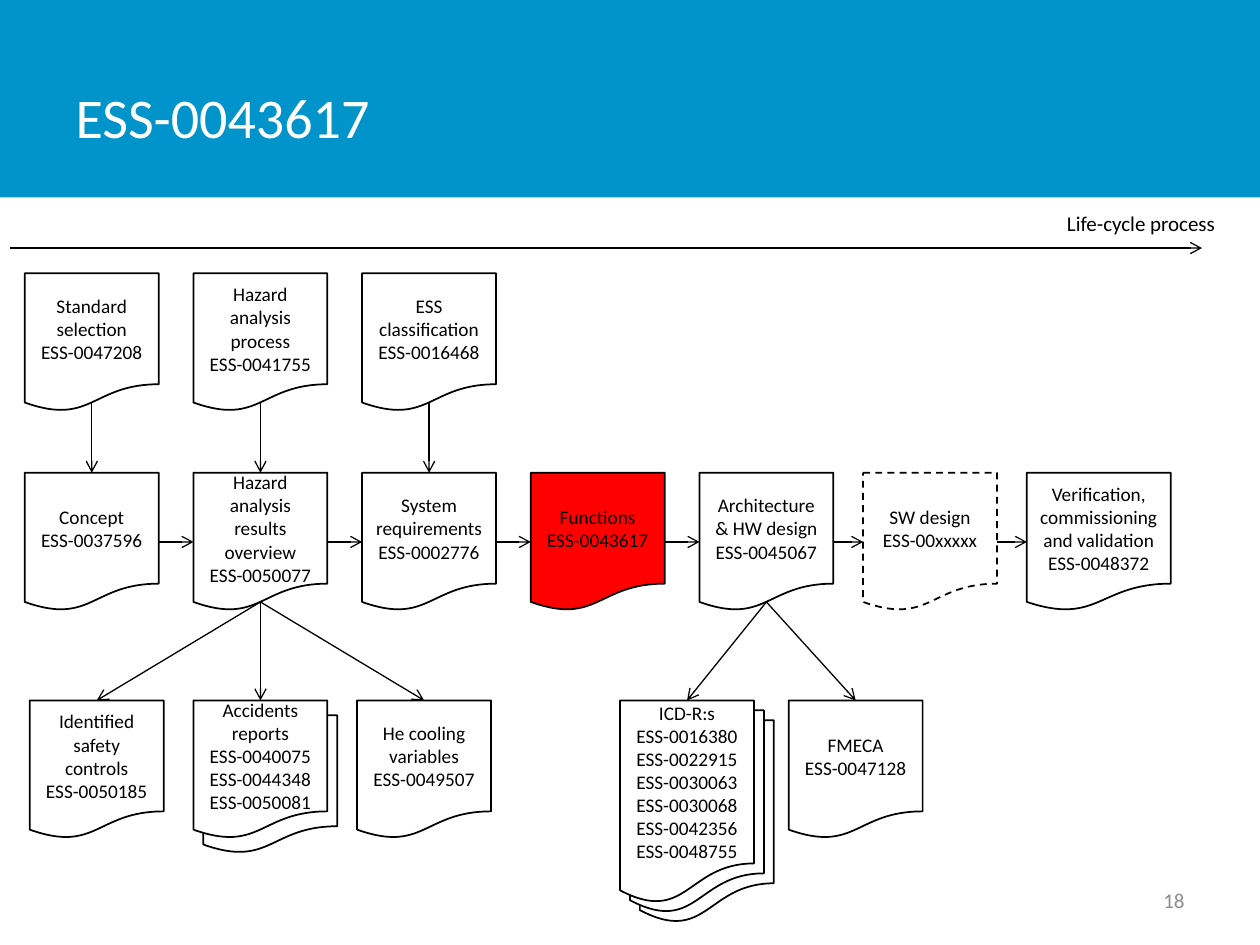
from dataclasses import dataclass

import pptx
import pptx.dml.color
import pptx.enum.dml
import pptx.enum.shapes
import pptx.enum.text
import pptx.oxml
import pptx.oxml.ns
import pptx.util
from pptx.util import Cm

COLORS = {"band": "0094CA", "paper": "FFFFFF", "ink": "000000",
          "current": "FF0000", "number": "8C8C8C"}
FONT = "Calibri"
ALIGN = pptx.enum.text.PP_ALIGN
MIDDLE = pptx.enum.text.MSO_ANCHOR.MIDDLE
SHAPE = pptx.enum.shapes.MSO_SHAPE
TOP, LEFT, BOTTOM, RIGHT = range(4)
CURVE = 20172 / 21600  # height share where the wavy edge crosses the centre

# Rows and columns, in cm
DOC_W, DOC_H = 2.7, 2.79
INPUT_Y, MAIN_Y, DETAIL_Y = 5.51, 9.53, 14.12
COLS = [0.5 + 3.4 * i for i in range(5)]


@dataclass
class Document:
    key: str
    x: float
    y: float
    text: str
    w: float = DOC_W
    h: float = DOC_H
    fill: str = "paper"
    dashed: bool = False
    copies: int = 0  # sheets stacked behind
    copy_dy: float = 0.2


DOCUMENTS = [
    # Inputs
    Document("standard", COLS[0], INPUT_Y, "Standard selection\nESS-0047208"),
    Document("process", COLS[1], INPUT_Y, "Hazard analysis process\nESS-0041755"),
    Document("classes", COLS[2], INPUT_Y, "ESS classification\nESS-0016468"),
    # Main chain
    Document("concept", COLS[0], MAIN_Y, "Concept\nESS-0037596"),
    Document("hazards", COLS[1], MAIN_Y,
             "Hazard analysis results overview\nESS-0050077"),
    Document("system", COLS[2], MAIN_Y, "System requirements\nESS-0002776"),
    Document("functions", COLS[3], MAIN_Y, "Functions\nESS-0043617", fill="current"),
    Document("hardware", COLS[4], MAIN_Y, "Architecture & HW design\nESS-0045067"),
    Document("software", 17.4, MAIN_Y, "SW design\nESS-00xxxxx", dashed=True),
    Document("validation", 20.7, MAIN_Y,
             "Verification, commissioning and validation\nESS-0048372", w=2.9),
    # Details
    Document("controls", 0.6, DETAIL_Y, "Identified safety controls\nESS-0050185"),
    Document("accidents", COLS[1], DETAIL_Y,
             "Accidents reports\nESS-0040075\nESS-0044348\nESS-0050081",
             copies=1, copy_dy=0.3),
    Document("cooling", 7.2, DETAIL_Y, "He cooling variables\nESS-0049507"),
    Document("icd", 12.5, DETAIL_Y,
             "ICD-R:s\nESS-0016380\nESS-0022915\nESS-0030063\n"
             "ESS-0030068\nESS-0042356\nESS-0048755", h=4.1, copies=2),
    Document("fmeca", 15.9, DETAIL_Y, "FMECA\nESS-0047128"),
]
CHAIN = ["concept", "hazards", "system", "functions", "hardware", "software",
         "validation"]
DOWNWARD = [("standard", "concept"), ("process", "hazards"), ("classes", "system"),
            ("hazards", "controls"), ("hazards", "accidents"),
            ("hazards", "cooling"), ("hardware", "icd"), ("hardware", "fmeca")]


def rgb(name: str) -> pptx.dml.color.RGBColor:
    return pptx.dml.color.RGBColor.from_string(COLORS[name])


def write(tf, text: str, size: int, color: str, align) -> None:
    for i, line in enumerate(text.split("\n")):
        p = tf.add_paragraph() if i else tf.paragraphs[0]
        p.alignment = align
        r = p.add_run()
        r.text = line
        r.font.name, r.font.size = FONT, pptx.util.Pt(size)
        r.font.color.rgb = rgb(color)


def add_sheet(s, doc: Document, offset: int):
    """Draw one sheet, moved right and down by its place in the stack."""
    sp = s.shapes.add_shape(SHAPE.FLOWCHART_DOCUMENT, Cm(doc.x + 0.2 * offset),
                            Cm(doc.y + doc.copy_dy * offset), Cm(doc.w), Cm(doc.h))
    sp.shadow.inherit = False
    sp.fill.solid()
    sp.fill.fore_color.rgb = rgb(doc.fill)
    sp.line.color.rgb = rgb("ink")
    sp.line.width = pptx.util.Pt(1)
    if doc.dashed:
        sp.line.dash_style = pptx.enum.dml.MSO_LINE.DASH
    return sp


def add_document(s, doc: Document):
    for offset in range(doc.copies, 0, -1):
        add_sheet(s, doc, offset)
    sp = add_sheet(s, doc, 0)
    tf = sp.text_frame
    tf.word_wrap = True
    tf.vertical_anchor = MIDDLE
    write(tf, doc.text, 11, "ink", ALIGN.CENTER)
    return sp


def add_arrow(s, x1: float = 0, y1: float = 0, x2: float = 0, y2: float = 0):
    c = s.shapes.add_connector(pptx.enum.shapes.MSO_CONNECTOR.STRAIGHT,
                               Cm(x1), Cm(y1), Cm(x2), Cm(y2))
    c.line.color.rgb = rgb("ink")
    c.line.width = pptx.util.Pt(0.75)
    ln = c.line._get_or_add_ln()
    ln.append(pptx.oxml.parse_xml(
        f'<a:tailEnd {pptx.oxml.ns.nsdecls("a")} type="arrow"/>'))
    ln.addnext(pptx.oxml.parse_xml(
        f'<a:effectLst {pptx.oxml.ns.nsdecls("a")}/>'))
    return c


def join(s, start, start_side: int, end, end_side: int) -> None:
    c = add_arrow(s)
    c.begin_connect(start, start_side)
    c.end_connect(end, end_side)
    if start_side == BOTTOM:
        c.begin_y = start.top + round(start.height * CURVE)


def add_label(s, x: float, y: float, w: float, h: float, text: str,
              color: str, align, wrap: bool):
    tf = s.shapes.add_textbox(Cm(x), Cm(y), Cm(w), Cm(h)).text_frame
    tf.word_wrap = wrap
    write(tf, text, 12, color, align)
    return tf


def main() -> None:
    prs = pptx.Presentation()
    prs.slide_width, prs.slide_height = Cm(25.4), Cm(19.05)
    s = prs.slides.add_slide(prs.slide_layouts[5])

    # Title on its band
    title = s.shapes.title
    title.left, title.top, title.width, title.height = (
        Cm(1.27), Cm(0.76), Cm(19.84), Cm(3.18))
    title.text_frame.vertical_anchor = MIDDLE
    write(title.text_frame, "ESS-0043617", 32, "paper", ALIGN.LEFT)
    band = s.shapes.add_shape(SHAPE.RECTANGLE, 0, 0, prs.slide_width, Cm(3.98))
    band.shadow.inherit = False
    band.fill.solid()
    band.fill.fore_color.rgb = rgb("band")
    band.line.fill.background()
    title.element.addprevious(band.element)

    # Time line
    add_arrow(s, 0.2, 5, 24.23, 5)
    add_label(s, 21.26, 4.12, 3.52, 0.77, "Life-cycle process", "ink",
              ALIGN.LEFT, wrap=False)

    # Documents and their links
    sheets = {doc.key: add_document(s, doc) for doc in DOCUMENTS}
    for a, b in zip(CHAIN, CHAIN[1:]):
        join(s, sheets[a], RIGHT, sheets[b], LEFT)
    for a, b in DOWNWARD:
        join(s, sheets[a], BOTTOM, sheets[b], TOP)

    # Slide number
    tf = add_label(s, 18.2, 17.65, 5.93, 1.01, "18", "number", ALIGN.RIGHT, wrap=True)
    tf.vertical_anchor = MIDDLE

    prs.save("out.pptx")


if __name__ == "__main__":
    main()
